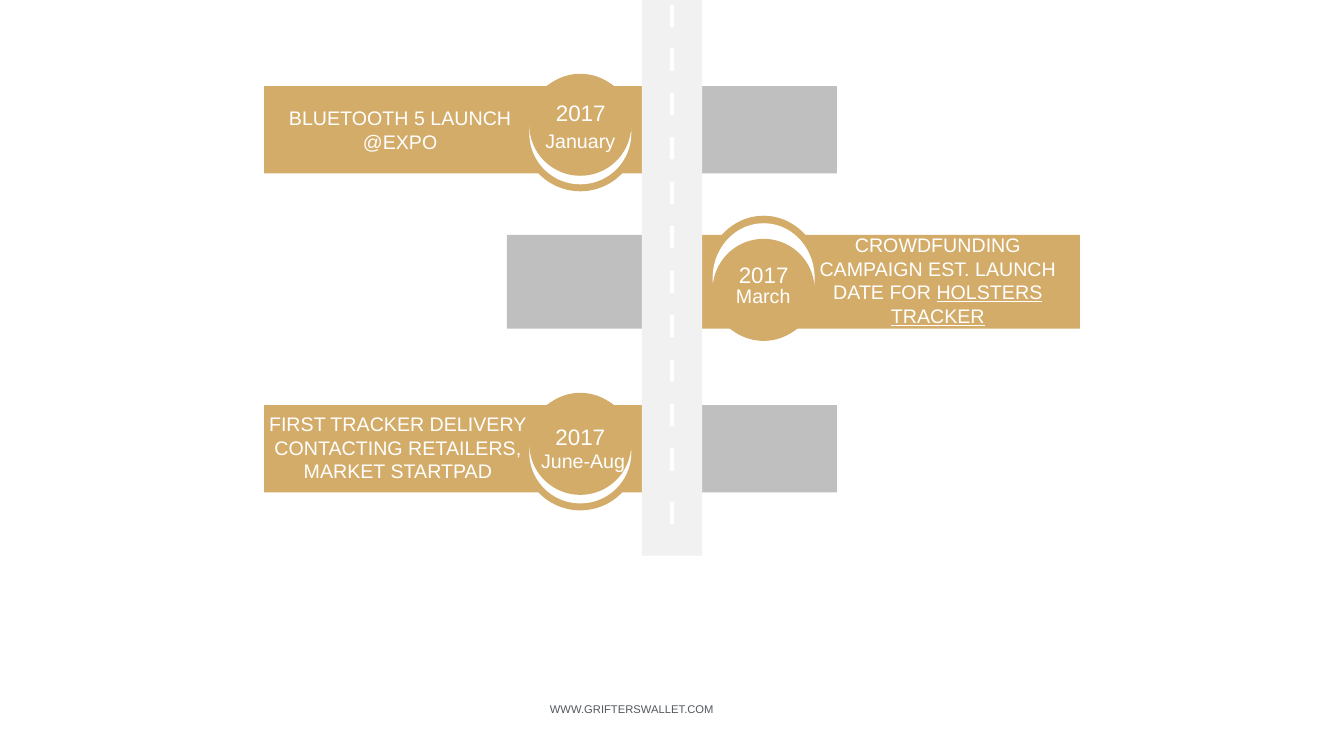
from pptx import Presentation
from pptx.dml.color import RGBColor
from pptx.enum.shapes import MSO_SHAPE
from pptx.enum.text import PP_ALIGN
from pptx.util import Cm, Pt

RECTANGLE = MSO_SHAPE.RECTANGLE
OVAL = MSO_SHAPE.OVAL
CENTER = PP_ALIGN.CENTER

COLORS = {
    "gold": "D3AC69",
    "grey": "BFBFBF",
    "road": "F1F1F1",
    "white": "FFFFFF",
    "footer": "53585F",
}
FONT = "Arial"

MILESTONES = [
    {
        "side": -1, "top": 2.17, "height": 2.2,
        "year": ("2017", 13.35, 2.49),
        "month": ("January", 13.34, 3.25),
        "caption": [[("BLUETOOTH 5 LAUNCH", False)], [("@EXPO", False)]],
        "caption_box": (7.01, 2.67, 6.15, 1.19),
    },
    {
        "side": 1, "top": 5.92, "height": 2.36,
        "year": ("2017", 17.96, 6.58),
        "month": ("March", 17.95, 7.16),
        "caption": [[("CROWDFUNDING CAMPAIGN EST. LAUNCH DATE FOR ", False),
                     ("HOLSTERS TRACKER", True)]],
        "caption_box": (20.55, 5.87, 6.17, 2.39),
    },
    {
        "side": -1, "top": 10.21, "height": 2.2,
        "year": ("2017", 13.34, 10.67),
        "month": ("June-Aug", 13.41, 11.3),
        "caption": [[("FIRST TRACKER DELIVERY", False)],
                    [("CONTACTING RETAILERS, MARKET STARTPAD", False)]],
        "caption_box": (6.45, 10.39, 7.16, 1.8),
    },
]
FOOTER = "WWW.GRIFTERSWALLET.COM"
FOOTER_BOX = (13.26, 17.7, 5.33, 0.33)

SLIDE_WIDTH, SLIDE_HEIGHT = 33.87, 19.05
ROAD_CENTER = SLIDE_WIDTH / 2
ROAD_WIDTH, ROAD_LENGTH = 1.52, 14
DASH_WIDTH, DASH_LENGTH = 0.11, 0.56
DASH_TOPS = [0.13] + [1.22 + 1.12 * step for step in range(10)] + [12.65]
BANNER_WIDTH, STUB_WIDTH = 9.52, 3.4
BADGE_OFFSET, BADGE_SIZE, BADGE_OVERHANG = 2.31, 2.57, 0.31
RING_WIDTH, RING_RATIO = 2.92, 1.33
CRESCENT_RATIO = 1.17
RING_CENTER_RATIO = 0.54

deck = Presentation()
deck.slide_width, deck.slide_height = Cm(SLIDE_WIDTH), Cm(SLIDE_HEIGHT)
slide = deck.slides.add_slide(deck.slide_layouts[6])


def add_block(preset, left, top, width, height, color):
    block = slide.shapes.add_shape(preset, Cm(left), Cm(top), Cm(width), Cm(height))
    block.shadow.inherit = False
    block.fill.solid()
    block.fill.fore_color.rgb = RGBColor.from_string(COLORS[color])
    block.line.fill.background()


def add_oval(center_x, center_y, width, height, color):
    add_block(OVAL, center_x - width / 2, center_y - height / 2, width, height, color)


def add_beside_road(side, top, width, height, color):
    edge = ROAD_CENTER + side * ROAD_WIDTH / 2
    add_block(RECTANGLE, edge if side > 0 else edge - width, top, width, height, color)


def add_label(box, paragraphs, size, color):
    label = slide.shapes.add_textbox(*(Cm(length) for length in box))
    frame = label.text_frame
    frame.word_wrap = True
    frame.margin_left = frame.margin_right = frame.margin_top = frame.margin_bottom = 0
    for index, pieces in enumerate(paragraphs):
        paragraph = frame.add_paragraph() if index else frame.paragraphs[0]
        paragraph.alignment = CENTER
        for wording, underlined in pieces:
            run = paragraph.add_run()
            run.text = wording
            run.font.name = FONT
            run.font.size = Pt(size)
            run.font.color.rgb = RGBColor.from_string(COLORS[color])
            if underlined:
                run.font.underline = True


def add_milestone(milestone):
    side, top, height = milestone["side"], milestone["top"], milestone["height"]
    middle = top + height / 2
    badge_x = ROAD_CENTER + side * BADGE_OFFSET
    ring_y = middle - side * (RING_CENTER_RATIO - 0.5) * height
    badge_y = middle + side * (height / 2 + BADGE_OVERHANG - BADGE_SIZE / 2)

    add_beside_road(side, top, BANNER_WIDTH, height, "gold")
    add_beside_road(-side, top, STUB_WIDTH, height, "grey")
    add_oval(badge_x, ring_y, RING_WIDTH, RING_RATIO * height, "gold")
    add_oval(badge_x, ring_y, BADGE_SIZE, CRESCENT_RATIO * height, "white")
    add_oval(badge_x, badge_y, BADGE_SIZE, BADGE_SIZE, "gold")

    for part, size, line_height in (("year", 16, 0.69), ("month", 14, 0.61)):
        wording, left, label_top = milestone[part]
        add_label((left, label_top, BADGE_SIZE, line_height), [[(wording, False)]], size, "white")
    add_label(milestone["caption_box"], milestone["caption"], 14, "white")


for milestone in MILESTONES:
    add_milestone(milestone)

add_block(RECTANGLE, ROAD_CENTER - ROAD_WIDTH / 2, 0, ROAD_WIDTH, ROAD_LENGTH, "road")
for dash_top in DASH_TOPS:
    add_block(RECTANGLE, ROAD_CENTER - DASH_WIDTH / 2, dash_top, DASH_WIDTH, DASH_LENGTH, "white")

add_label(FOOTER_BOX, [[(FOOTER, False)]], 8, "footer")

deck.save("out.pptx")
